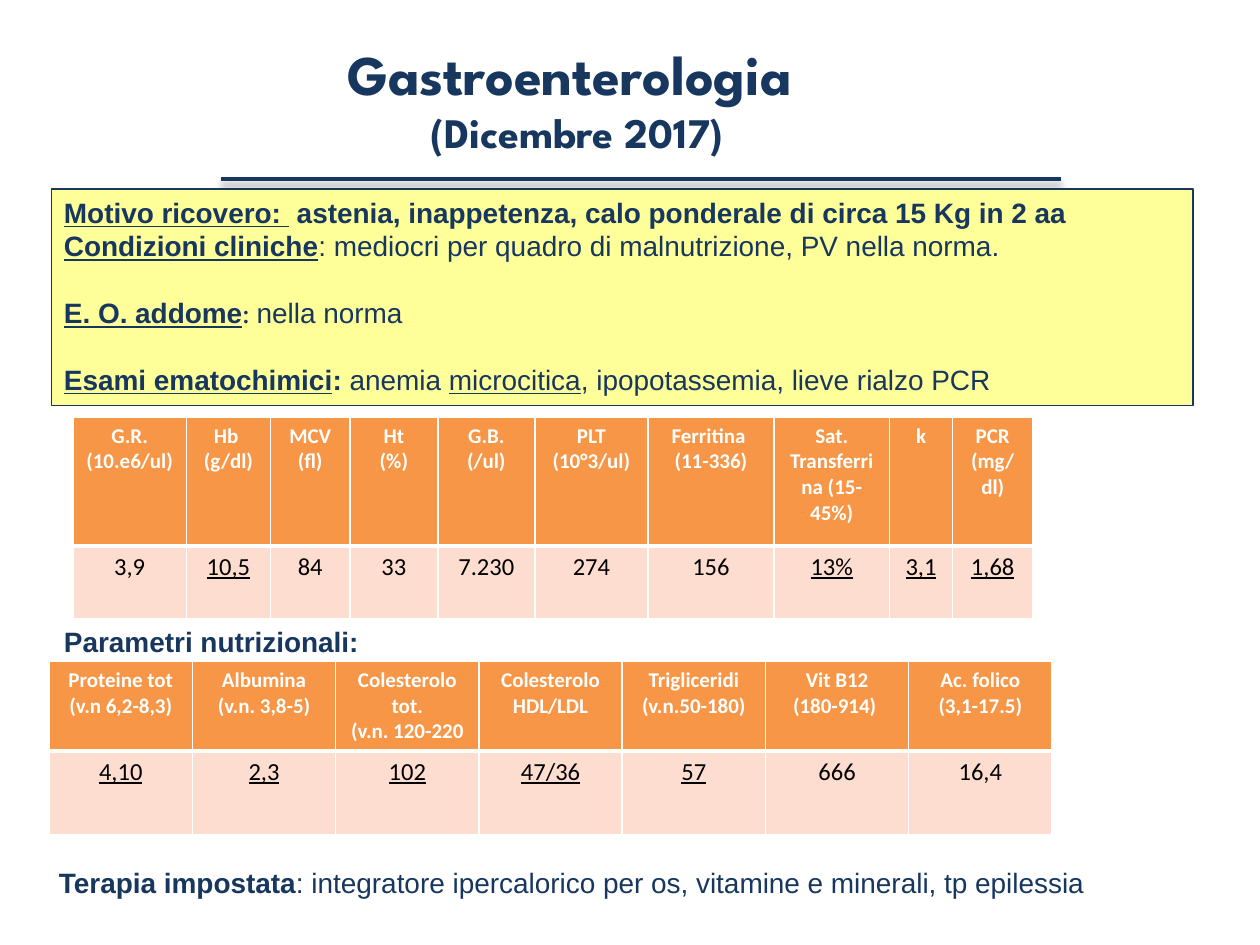
import lxml.etree
import pptx
import pptx.dml.color
import pptx.enum.shapes
import pptx.enum.text
import pptx.oxml
import pptx.oxml.ns
import pptx.util

GRID_COLUMNS, GRID_ROWS = 100, 75
NAVY, YELLOW, WHITE, BLACK = "17375E", "FFFF99", "FFFFFF", "000000"
ORANGE, PEACH = "F79646", "FCDDCF"
ALIGN = pptx.enum.text.PP_ALIGN
FIT = pptx.enum.text.MSO_AUTO_SIZE
TOP = pptx.enum.text.MSO_ANCHOR.TOP
Pt = pptx.util.Pt

deck = pptx.Presentation()
deck.slide_width, deck.slide_height = pptx.util.Inches(10), pptx.util.Inches(7.5)


def grid_box(left, top, width, height):
    column, row = deck.slide_width / GRID_COLUMNS, deck.slide_height / GRID_ROWS
    return [int(n) for n in (left * column, top * row, width * column, height * row)]


def colour(hex_string):
    return pptx.dml.color.RGBColor.from_string(hex_string)


def style(font, size, name, hex_string, bold=None):
    font.size, font.name, font.bold = Pt(size), name, bold
    font.color.rgb = colour(hex_string)


def write_spans(para, spans, size=16):
    style(para.font, size, "Arial", NAVY)
    for text, marks in spans:
        span = para.add_run()
        span.text = text
        span.font.bold = "b" in marks
        if "u" in marks:
            span.font.underline = True
        if "s" in marks:
            span.font.name = "League Spartan"


def add_title(page, box, lines):
    title = page.shapes.title
    title.left, title.top, title.width, title.height = box
    frame = title.text_frame
    frame.text = "\n".join(text for text, size in lines)
    frame.word_wrap, frame.vertical_anchor = True, TOP
    frame.auto_size = FIT.NONE
    for para, (text, size) in zip(frame.paragraphs, lines):
        para.alignment = ALIGN.CENTER
        style(para.font, size, "League Spartan", NAVY, True)


def add_rule(page, box):
    left, top, width, height = box
    rule = page.shapes.add_connector(
        pptx.enum.shapes.MSO_CONNECTOR.STRAIGHT, left, top, left + width, top + height)
    rule.line.color.rgb, rule.line.width = colour(NAVY), Pt(2.25)
    effects = lxml.etree.SubElement(
        rule._element.spPr, pptx.oxml.ns.qn("a:effectLst"))
    effects.append(pptx.oxml.parse_xml(
        f'<a:outerShdw {pptx.oxml.ns.nsdecls("a")} blurRad="{Pt(4)}" dist="{Pt(3)}" '
        f'dir="5400000" rotWithShape="0"><a:srgbClr val="{BLACK}">'
        '<a:alpha val="40000"/></a:srgbClr></a:outerShdw>'))


def add_findings(page, box, findings):
    panel = page.shapes.add_shape(pptx.enum.shapes.MSO_SHAPE.RECTANGLE, *box)
    panel.shadow.inherit = False
    panel.fill.solid()
    panel.fill.fore_color.rgb = colour(YELLOW)
    panel.line.color.rgb, panel.line.width = colour(NAVY), Pt(0.75)
    frame = panel.text_frame
    frame.word_wrap, frame.vertical_anchor = True, TOP
    for index, (gap, spans) in enumerate(findings):
        para = frame.add_paragraph() if index else frame.paragraphs[0]
        para.alignment, para.space_before = ALIGN.LEFT, Pt(gap)
        write_spans(para, spans)


def add_label(page, box, spans):
    label = page.shapes.add_textbox(*box)
    label.text_frame.word_wrap = False
    label.text_frame.auto_size = FIT.SHAPE_TO_FIT_TEXT
    write_spans(label.text_frame.paragraphs[0], spans)


def set_borders(cell, top, bottom):
    for side, width in (("L", 1), ("R", 1), ("T", top), ("B", bottom)):
        cell._tc.get_or_add_tcPr().append(pptx.oxml.parse_xml(
            f'<a:ln{side} {pptx.oxml.ns.nsdecls("a")} w="{Pt(width)}"><a:solidFill>'
            f'<a:srgbClr val="{WHITE}"/></a:solidFill></a:ln{side}>'))


def fill_cell(cell, text, header, underlined):
    set_borders(cell, *((1, 3) if header else (3, 1)))
    cell.fill.solid()
    cell.fill.fore_color.rgb = colour(ORANGE if header else PEACH)
    cell.text = text
    for para in cell.text_frame.paragraphs:
        para.alignment = ALIGN.CENTER
        style(para.font, 12 if header else 14, "Calibri",
              WHITE if header else BLACK, header)
        if underlined:
            para.font.underline = True


def add_results(page, box, shares, header_share, results):
    left, top, width, height = box
    table = page.shapes.add_table(2, len(results), *box).table
    table.horz_banding = False
    table.rows[0].height = int(height * header_share)
    table.rows[1].height = height - table.rows[0].height
    for index, (heading, value, underlined) in enumerate(results):
        table.columns[index].width = int(width * shares[index] / sum(shares))
        fill_cell(table.cell(0, index), heading, True, False)
        fill_cell(table.cell(1, index), value, False, underlined)


FINDINGS = [
    (0, [("Motivo ricovero: ", "bu"),
         (" astenia, inappetenza, calo ponderale di circa 15 Kg in 2 aa", "b")]),
    (0, [("Condizioni cliniche", "bu"),
         (": mediocri per quadro di malnutrizione, PV nella norma.", "")]),
    (19, [("E. O. addome", "bu"), (": ", "s"), ("nella norma", "")]),
    (19, [("Esami ematochimici", "bu"), (": ", "b"), ("anemia ", ""),
          ("microcitica", "u"), (", ipopotassemia, lieve rialzo PCR", "")]),
]
BLOOD_SHARES = [0.9, 0.67, 0.63, 0.7, 0.77, 0.9, 1, 0.92, 0.5, 0.64]
BLOOD = [
    ("G.R.\n(10.e6/ul)", "3,9", False),
    ("Hb \n(g/dl)", "10,5", True),
    ("MCV\n(fl)", "84", False),
    ("Ht\n(%)", "33", False),
    ("G.B. (/ul)", "7.230", False),
    ("PLT\n(10°3/ul)", "274", False),
    ("Ferritina \n(11-336)", "156", False),
    ("Sat. Transferrina (15-45%)", "13%", True),
    ("k", "3,1", True),
    ("PCR\n(mg/dl)", "1,68", True),
]
NUTRITION = [
    ("Proteine tot\n(v.n 6,2-8,3)", "4,10", True),
    ("Albumina\n(v.n. 3,8-5)", "2,3", True),
    ("Colesterolo tot.\n(v.n. 120-220", "102", True),
    ("Colesterolo HDL/LDL", "47/36", True),
    ("Trigliceridi (v.n.50-180)", "57", True),
    ("Vit B12\n(180-914) ", "666", False),
    ("Ac. folico\n(3,1-17.5)", "16,4", False),
]


def main():
    page = deck.slides.add_slide(deck.slide_layouts.get_by_name("Title Only"))
    add_rule(page, grid_box(17.5, 14.2, 66.7, 0))
    add_title(page, grid_box(1.2, 2.6, 89.2, 10.4),
              [("Gastroenterologia ", 32), ("(Dicembre 2017)", 24)])
    add_findings(page, grid_box(4.1, 15, 90.6, 17.2), FINDINGS)
    add_results(page, grid_box(5.8, 33.1, 76.2, 16), BLOOD_SHARES, 0.64, BLOOD)
    add_results(page, grid_box(3.9, 52.5, 79.6, 13.6), [1] * len(NUTRITION), 0.51, NUTRITION)
    add_label(page, grid_box(4.1, 49.1, 26.4, 3.7), [("Parametri nutrizionali:", "b")])
    add_label(page, grid_box(3.7, 68.2, 84.7, 3.7), [
        ("Terapia impostata", "b"),
        (": integratore ipercalorico per os, vitamine e minerali, tp epilessia", "")])
    deck.save("out.pptx")


if __name__ == "__main__":
    main()
